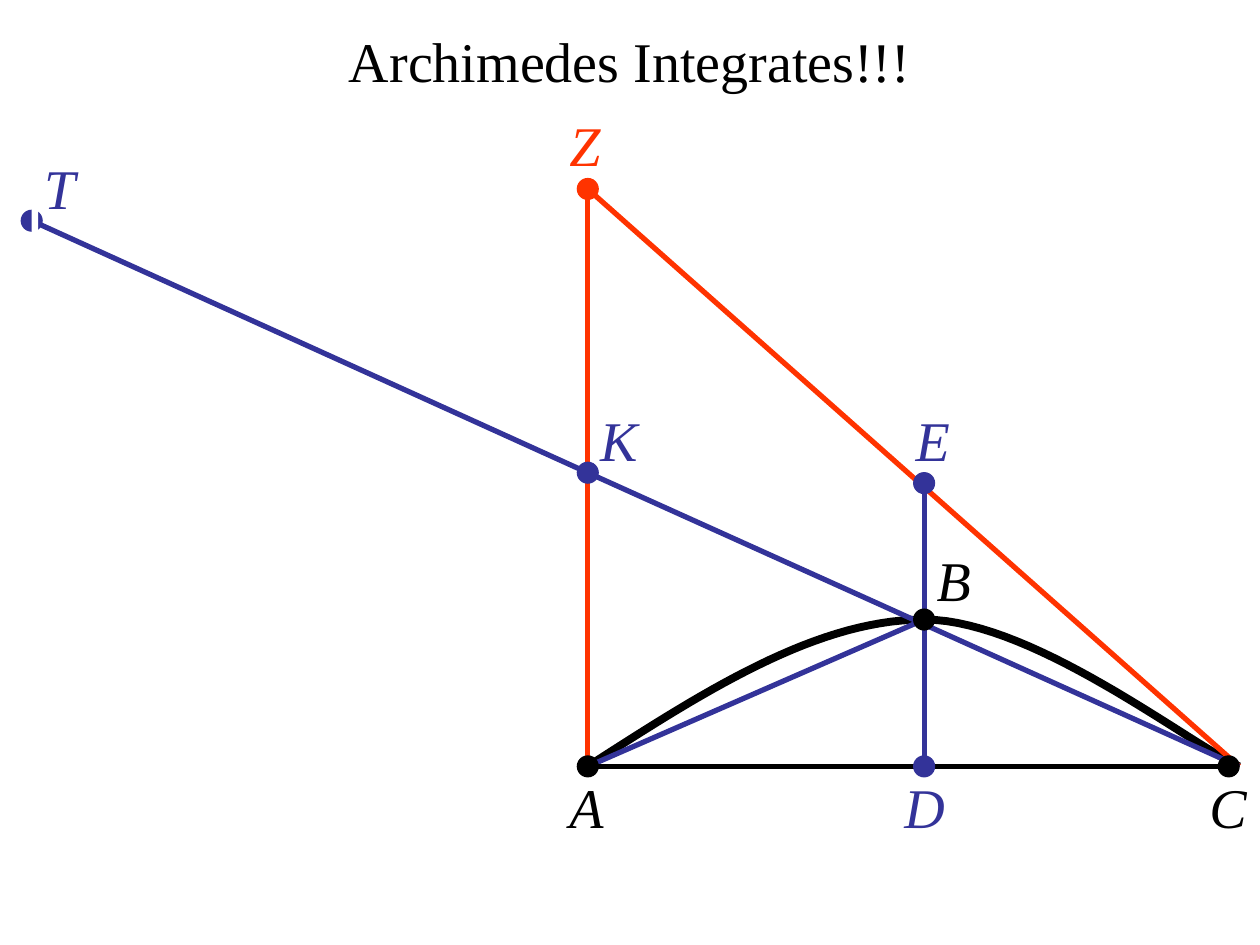
from pptx import Presentation
from pptx.dml.color import RGBColor
from pptx.enum.shapes import MSO_CONNECTOR as CONN, MSO_SHAPE as SHAPE
from pptx.enum.text import MSO_AUTO_SIZE as AUTO, PP_ALIGN as ALIGN
from pptx.oxml.ns import qn
from pptx.util import Cm, Pt

BLACK = RGBColor(0x00, 0x00, 0x00)
WHITE = RGBColor(0xFF, 0xFF, 0xFF)
BLUE = RGBColor(0x33, 0x33, 0x99)
RED = RGBColor(0xFF, 0x33, 0x00)

A, B, C = (11.85, 15.45), (18.63, 12.49), (24.98, 15.45)
D, E = (18.63, 15.45), (18.63, 9.74)
K, T, Z = (11.85, 9.53), (0.64, 4.45), (11.85, 3.81)
C_DOT = (24.77, 15.45)


def bezier(p0, p1, p2, p3, steps=30):
    for i in range(1, steps + 1):
        t = i / steps
        u = 1 - t
        yield tuple(u**3 * a + 3 * u * u * t * b + 3 * u * t * t * c + t**3 * d
                    for a, b, c, d in zip(p0, p1, p2, p3))


class Diagram:
    font = {"name": "Times New Roman", "size": Pt(32)}
    dot_size = 0.42

    def __init__(self, slide):
        self.shapes = slide.shapes

    def shape(self, kind, x, y, w, h, color):
        sp = self.shapes.add_shape(kind, Cm(x), Cm(y), Cm(w), Cm(h))
        sp.shadow.inherit = False
        sp.fill.solid()
        sp.fill.fore_color.rgb = color
        sp.line.fill.background()
        return sp

    def dot(self, center, color):
        x, y = (v - self.dot_size / 2 for v in center)
        sp = self.shape(SHAPE.OVAL, x, y, self.dot_size, self.dot_size, color)
        sp.line.color.rgb = color
        sp.line.width = Pt(0.75)

    def line(self, start, end, color):
        ln = self.shapes.add_connector(CONN.STRAIGHT, *map(Cm, start + end))
        ln.line.color.rgb = color
        ln.line.width = Pt(3)
        ln._element.spPr.get_or_add_xfrm()
        ln._element.spPr.append(ln._element.spPr.makeelement(qn("a:effectLst"), {}))

    def curve(self, start, points):
        fb = self.shapes.build_freeform(*map(Cm, start))
        fb.add_line_segments([tuple(map(Cm, p)) for p in points], close=False)
        sp = fb.convert_to_shape()
        sp.shadow.inherit = False
        sp.fill.solid()
        sp.fill.fore_color.rgb = WHITE
        sp.line.color.rgb = BLACK
        sp.line.width = Pt(4.5)

    def text(self, text, x, y, color, w=2.54, align=ALIGN.LEFT, italic=True):
        tf = self.shapes.add_textbox(Cm(x), Cm(y), Cm(w), Cm(1.6)).text_frame
        tf.word_wrap = True
        tf.auto_size = AUTO.SHAPE_TO_FIT_TEXT
        p = tf.paragraphs[0]
        p.alignment = align
        r = p.add_run()
        r.text = text
        for key, value in {**self.font, "italic": italic}.items():
            setattr(r.font, key, value)
        r.font.color.rgb = color


def main():
    prs = Presentation()
    prs.slide_width, prs.slide_height = Cm(25.4), Cm(19.05)
    s = Diagram(prs.slides.add_slide(prs.slide_layouts[6]))

    s.curve(A, [*bezier(A, (14.15, 13.97), (16.43, 12.49), B),
                *bezier(B, (20.8, 12.49), (23.93, 14.96), C)])

    for name, x, y, color in [
        ("T", 0.64, 2.97, BLUE), ("K", 11.85, 8.05, BLUE),
        ("E", 18.21, 8.05, BLUE), ("D", 17.98, 15.45, BLUE),
        ("Z", 11.23, 2.11, RED), ("A", 11.23, 15.45, BLACK),
        ("B", 18.63, 10.87, BLACK), ("C", 24.13, 15.45, BLACK),
    ]:
        s.text(name, x, y, color)

    for start, end, color in [
        (A, B, BLUE), (C, Z, RED), (A, C, BLACK), (A, Z, RED),
        (E, D, BLUE), (C, K, BLUE), (K, T, BLUE),
    ]:
        s.line(start, end, color)

    for color, points in [(BLACK, (B, A, C_DOT)), (BLUE, (D, E, K, T)), (RED, (Z,))]:
        for point in points:
            s.dot(point, color)

    s.text("Archimedes Integrates!!!", 2.75, 0.42, BLACK,
           w=19.9, align=ALIGN.CENTER, italic=False)
    s.shape(SHAPE.RECTANGLE, 0.64, 2.97, 0.13, 2.97, WHITE)
    prs.save("out.pptx")


if __name__ == "__main__":
    main()
